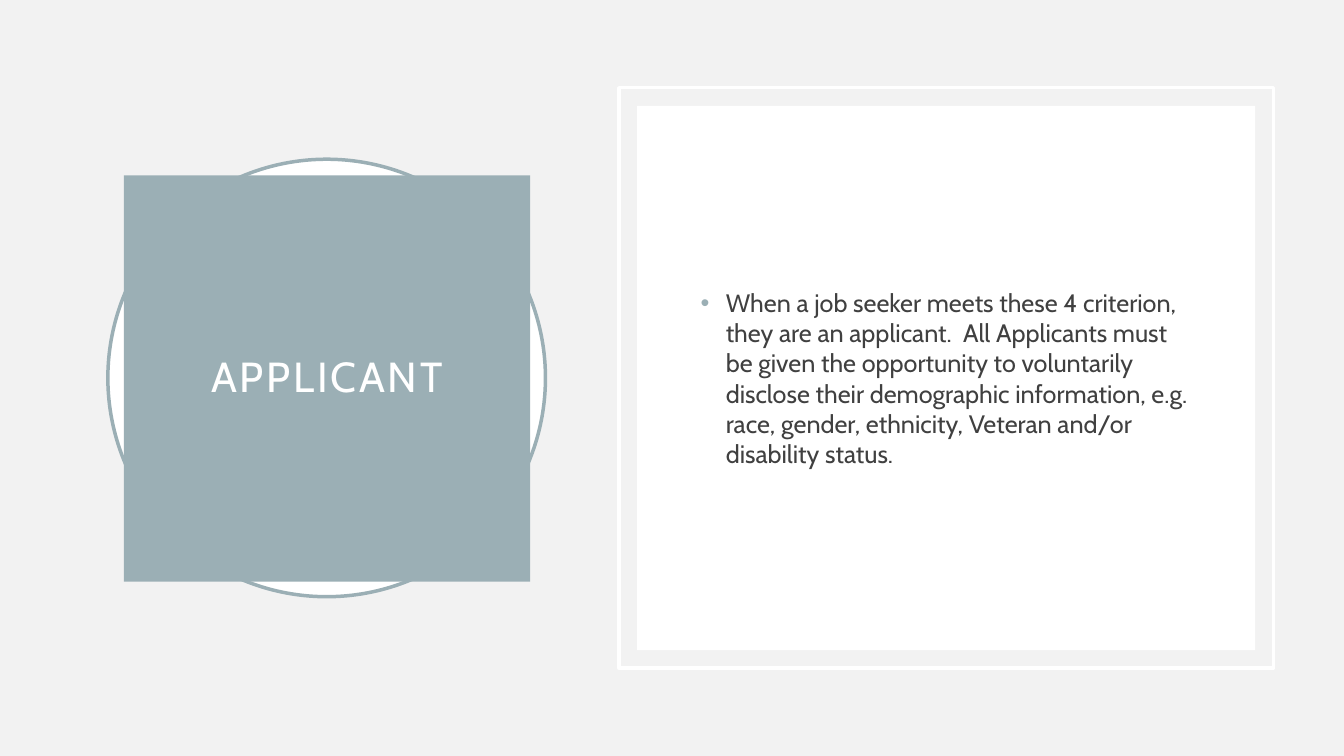
from lxml.etree import SubElement
from pptx import Presentation
from pptx.dml.color import RGBColor
from pptx.enum.shapes import MSO_SHAPE
from pptx.enum.text import MSO_ANCHOR, PP_ALIGN
from pptx.oxml.ns import qn
from pptx.util import Inches, Pt

WIDTH, HEIGHT = 13.33, 7.5
COLUMNS, ROWS = 1333, 750  # a fine grid: one cell is 0.01 inch


def colour(hex_code):
    return RGBColor.from_string(hex_code)


class SlideBuilder:
    FONT = "Cabin"
    PAPER, WHITE, ACCENT, INK = "F2F2F2", "FFFFFF", "9BAFB5", "404040"
    OUTLINE = 2.5

    def __init__(self, deck):
        self.deck = deck
        self.slide = deck.slides.add_slide(deck.slide_layouts[6])
        background = self.slide.background.fill
        background.solid()
        background.fore_color.rgb = colour(self.PAPER)

    def place(self, column, row, columns, rows):
        """Turn grid cells into left, top, width and height."""
        cell_width = self.deck.slide_width / COLUMNS
        cell_height = self.deck.slide_height / ROWS
        return (round(column * cell_width), round(row * cell_height),
                round(columns * cell_width), round(rows * cell_height))

    def panel(self, preset, cells, fill=None, outline=None):
        panel = self.slide.shapes.add_shape(preset, *self.place(*cells))
        panel.shadow.inherit = False
        if fill:
            panel.fill.solid()
            panel.fill.fore_color.rgb = colour(fill)
        else:
            panel.fill.background()
        if outline:
            panel.line.color.rgb = colour(outline)
            panel.line.width = Pt(self.OUTLINE)
        else:
            panel.line.fill.background()
        return panel

    def add_run(self, paragraph, text, size, ink):
        run = paragraph.add_run()
        run.text = text
        run.font.name = self.FONT
        run.font.size = Pt(size)
        run.font.color.rgb = colour(ink)
        return run

    def title(self, panel, text, inset=0.2, tracking=2):
        frame = panel.text_frame
        frame.word_wrap = True
        frame.vertical_anchor = MSO_ANCHOR.MIDDLE
        frame.margin_left = frame.margin_right = Inches(inset)
        frame.margin_top = frame.margin_bottom = Inches(inset)
        heading = frame.paragraphs[0]
        heading.alignment = PP_ALIGN.CENTER
        heading.line_spacing = 0.9
        run = self.add_run(heading, text, 30, self.WHITE)
        run.font._element.set("spc", str(tracking * 100))

    def bullets(self, cells, points):
        frame = self.slide.shapes.add_textbox(*self.place(*cells)).text_frame
        frame.word_wrap = True
        frame.vertical_anchor = MSO_ANCHOR.MIDDLE
        for index, point in enumerate(points):
            paragraph = frame.add_paragraph() if index else frame.paragraphs[0]
            paragraph.space_before = Pt(10)
            self.add_bullet(paragraph)
            self.add_run(paragraph, point, 18, self.INK)

    def add_bullet(self, paragraph, indent=0.25):
        properties = paragraph._p.get_or_add_pPr()
        properties.set("marL", str(Inches(indent)))
        properties.set("indent", str(-Inches(indent)))
        bullet_colour = SubElement(properties, qn("a:buClr"))
        SubElement(bullet_colour, qn("a:srgbClr")).set("val", self.ACCENT)
        SubElement(properties, qn("a:buFont")).set("typeface", "Arial")
        SubElement(properties, qn("a:buChar")).set("char", "•")


def main():
    deck = Presentation()
    deck.slide_width, deck.slide_height = Inches(WIDTH), Inches(HEIGHT)
    page = SlideBuilder(deck)

    page.panel(MSO_SHAPE.OVAL, (107, 158, 434, 434), page.WHITE, page.ACCENT)
    title_block = page.panel(MSO_SHAPE.RECTANGLE, (123, 174, 403, 403), page.ACCENT)
    page.title(title_block, "APPLICANT")

    page.panel(MSO_SHAPE.RECTANGLE, (614, 87, 649, 576), outline=page.WHITE)
    page.panel(MSO_SHAPE.RECTANGLE, (632, 105, 613, 540), page.WHITE)
    page.bullets((685, 158, 509, 434), [
        "When a job seeker meets these 4 criterion, they are an applicant.  "
        "All Applicants must be given the opportunity to voluntarily disclose "
        "their demographic information, e.g. race, gender, ethnicity, Veteran "
        "and/or disability status.",
    ])
    deck.save("out.pptx")


if __name__ == "__main__":
    main()
